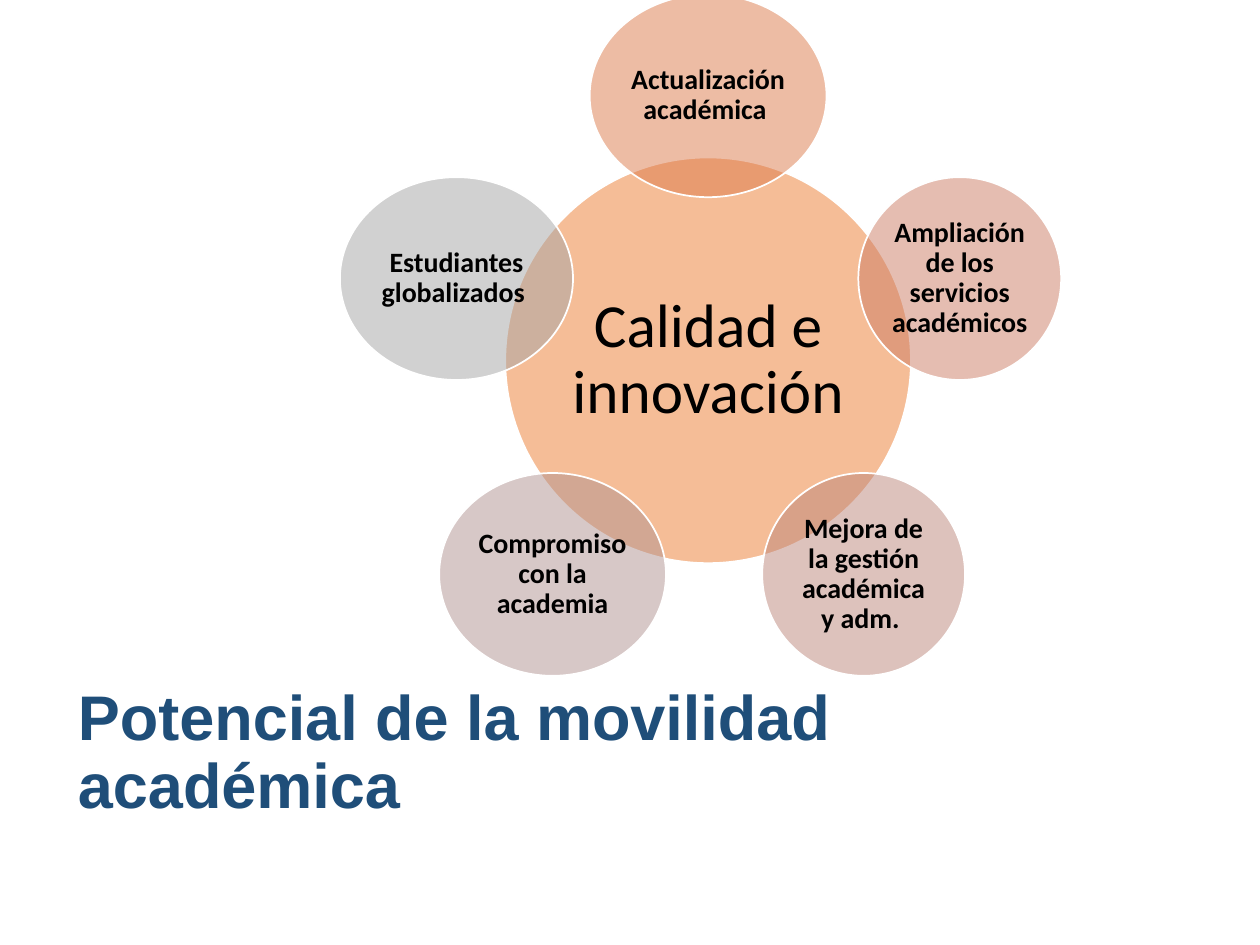
from dataclasses import dataclass
from math import cos, pi, sin, sqrt

from lxml import etree
from pptx import Presentation
from pptx.dml.color import RGBColor
from pptx.enum.shapes import MSO_SHAPE
from pptx.enum.text import MSO_ANCHOR, PP_ALIGN
from pptx.oxml.ns import qn
from pptx.util import Inches, Pt

OVAL = MSO_SHAPE.OVAL
MIDDLE = MSO_ANCHOR.MIDDLE
LEFT, CENTER = PP_ALIGN.LEFT, PP_ALIGN.CENTER


@dataclass(frozen=True)
class Theme:
    navy: str = "1F4E79"
    black: str = "000000"
    white: str = "FFFFFF"
    orange: str = "ED7D31"
    head: str = "Arial"
    body: str = "Calibri"
    big: int = 36
    hub: int = 35
    small: int = 16
    alpha: int = 50


class Slide:
    def __init__(self, deck, theme):
        self.theme = theme
        self.shapes = deck.slides.add_slide(deck.slide_layouts[6]).shapes

    def text(self, words, left, top, width, height, font, color, align=CENTER, inset=None):
        box = self.shapes.add_textbox(*map(Inches, (left, top, width, height)))
        frame = box.text_frame
        form = {"word_wrap": True, "vertical_anchor": MIDDLE}
        if inset is not None:
            for side in ("left", "top", "right", "bottom"):
                form[f"margin_{side}"] = Inches(inset)
        para = frame.paragraphs[0]
        run = para.add_run()
        run.text = words
        parts = ((frame, form), (para, {"alignment": align, "line_spacing": 0.9}), (run.font, font))
        for part, values in parts:
            for name, value in values.items():
                setattr(part, name, value)
        run.font.color.rgb = RGBColor.from_string(color)

    def circle(self, words, mid_x, mid_y, width, height, color, font, inset):
        oval = self.shapes.add_shape(
            OVAL, *map(Inches, (mid_x - width / 2, mid_y - height / 2, width, height)))
        oval.shadow.inherit = False
        oval.fill.solid()
        oval.fill.fore_color.rgb = RGBColor.from_string(color)
        tint = oval.fill._xPr.find(qn("a:solidFill"))[0]
        etree.SubElement(tint, qn("a:alpha"), val=str(self.theme.alpha * 1000))
        oval.line.color.rgb = RGBColor.from_string(self.theme.white)
        oval.line.width = Pt(1)
        # The label fills the box inscribed in the oval
        wide, high = width / sqrt(2), height / sqrt(2)
        self.text(words, mid_x - wide / 2, mid_y - high / 2, wide, high,
                  font, self.theme.black, inset=inset)


def main():
    deck = Presentation()
    deck.slide_width, deck.slide_height = Inches(10), Inches(7.5)
    theme = Theme()
    slide = Slide(deck, theme)

    # Title
    slide.text("Potencial de la movilidad académica", 0.52, 5.26, 8.62, 1.45,
               {"name": theme.head, "size": Pt(theme.big), "bold": True}, theme.navy, LEFT)

    # Hub
    hub_x, hub_y, reach = 5.62, 2.86, 2.1
    slide.circle("Calidad e innovación", hub_x, hub_y, 3.22, 3.22, theme.orange,
                 {"name": theme.body, "size": Pt(theme.hub)}, 0.05)

    # Ring of five, clockwise from the top: label, width, color
    ring = [
        ("Actualización académica ", 1.88, "DC7A4B"),
        ("Ampliación de los servicios académicos ", 1.61, "CC7D64"),
        ("Mejora de la gestión académica y adm. ", 1.61, "BD867B"),
        ("Compromiso con la academia", 1.8, "B09391"),
        ("Estudiantes globalizados ", 1.85, "A5A5A5"),
    ]
    font = {"name": theme.body, "size": Pt(theme.small), "bold": True}
    for i, (words, width, color) in enumerate(ring):
        turn = 2 * pi * i / len(ring)
        slide.circle(words, hub_x + reach * sin(turn), hub_y - reach * cos(turn),
                     width, 1.61, color, font, 0.02)

    deck.save("out.pptx")


if __name__ == "__main__":
    main()
